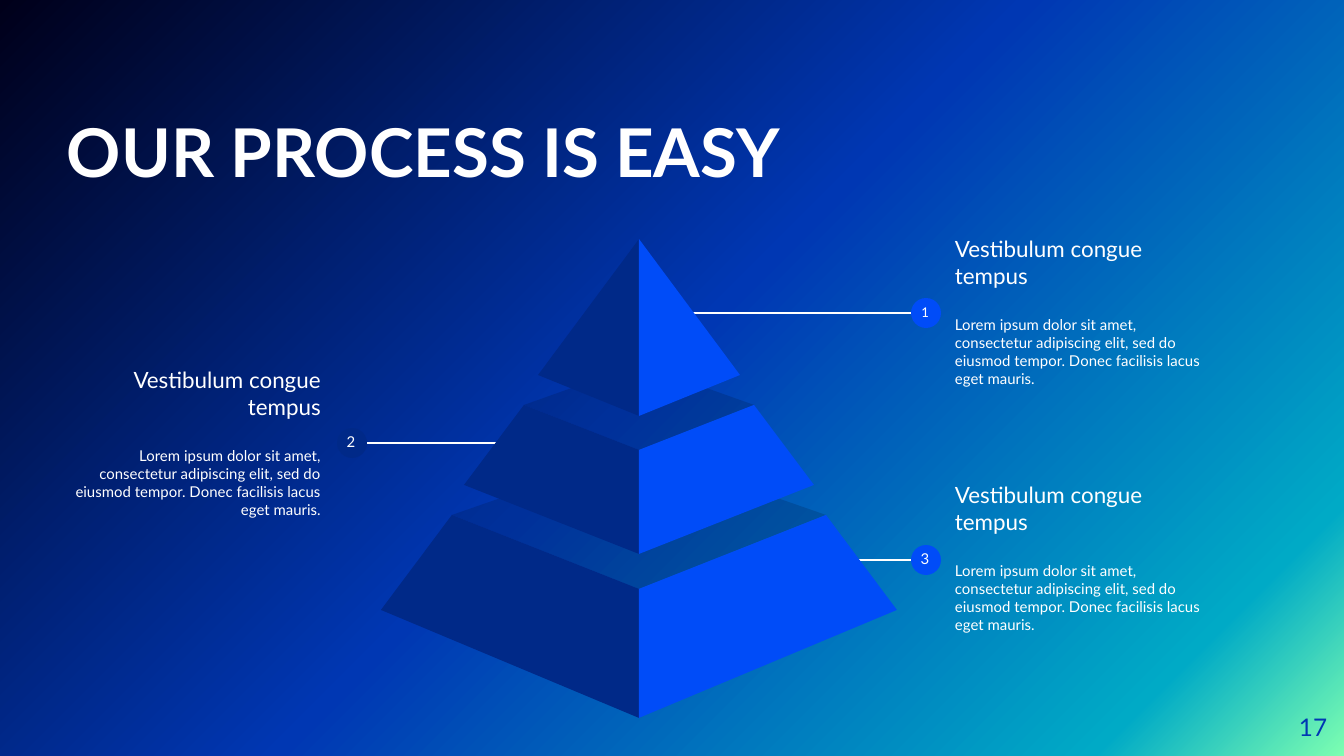
from copy import deepcopy
from dataclasses import dataclass

from lxml import etree
from pptx import Presentation
from pptx import util as u
from pptx.dml.color import RGBColor
from pptx.enum import shapes, text
from pptx.oxml.ns import qn

EMU_PER_PX = 914400 / 134.4
TITLE_ONLY = 5
BODY = ("Lorem ipsum dolor sit amet, consectetur adipiscing elit, "
        "sed do eiusmod tempor. Donec facilisis lacus eget mauris.")


@dataclass(frozen=True)
class Theme:
    font: str = "Lato"
    digit_font: str = "Calibri"
    white: str = "FFFFFF"
    light: str = "004CF8"
    dark: str = "002988"
    shade: str = "001230"
    shade_opacity: int = 19
    page: str = "0037B3"
    backdrop: tuple = ((0, "7DFFB1"), (12, "00AAC6"), (51, "0037B3"), (100, "00001A"))
    title_size: int = 36
    page_size: int = 13
    heading_size: int = 12
    body_size: int = 8


THEME = Theme()


@dataclass(frozen=True)
class Callout:
    number: str
    text_left: int
    text_top: int
    line_start: int
    line_end: int
    line_y: int
    dot_left: int
    color: str = THEME.light
    align: int = text.PP_ALIGN.LEFT
    font: str = THEME.font


@dataclass(frozen=True)
class Tier:
    """One pyramid slice; rim and foot are (half width, y) of its outer corners."""
    rim: tuple
    rim_front: int
    foot: tuple
    foot_front: int
    back: int = None


CENTER_X = 639
TIERS = (
    Tier((187, 515), 589, (258, 610), 718, back=450),
    Tier((115, 405), 450, (175, 485), 554, back=364),
    Tier((0, 239), 239, (101, 375), 416),
)
CALLOUTS = (
    Callout("3", 942, 456, 853, 939, 560, 911),
    Callout("2", 60, 341, 500, 347, 443, 337, THEME.dark, text.PP_ALIGN.RIGHT),
    Callout("1", 942, 210, 688, 939, 313, 911, font=THEME.digit_font),
)


def px(length):
    return u.Emu(round(length * EMU_PER_PX))


def rgb(color):
    return RGBColor.from_string(color)


def paint_background(slide):
    fill = slide.background.fill
    fill.gradient()
    fill.gradient_angle = 135
    stops = fill.gradient_stops
    stop_list = slide.background._cSld.find(".//" + qn("a:gsLst"))
    for _ in range(len(THEME.backdrop) - len(stops)):
        stop_list.append(deepcopy(stop_list[0]))
    for stop, (percent, color) in zip(fill.gradient_stops, THEME.backdrop):
        stop.position = percent / 100
        stop.color.rgb = rgb(color)


def set_frame(frame, anchor, inset=0):
    frame.word_wrap = True
    frame.auto_size = text.MSO_AUTO_SIZE.NONE
    frame.vertical_anchor = anchor
    frame.margin_left = frame.margin_right = px(inset)
    frame.margin_top = frame.margin_bottom = px(inset)


def style(paragraph, size, align=text.PP_ALIGN.LEFT, color=THEME.white,
          font=THEME.font, bold=False):
    paragraph.alignment = align
    for run in paragraph.runs:
        run.font.name = font
        run.font.size = u.Pt(size)
        run.font.bold = bold
        run.font.color.rgb = rgb(color)


def add_text(slide, box, lines, anchor, inset=0):
    frame = slide.shapes.add_textbox(*map(px, box)).text_frame
    set_frame(frame, anchor, inset)
    frame.text = "\n".join(lines)
    return frame.paragraphs


def set_title(slide, wording):
    title = slide.shapes.title
    title.left, title.top, title.width, title.height = map(px, (67, 65, 886, 126))
    set_frame(title.text_frame, text.MSO_ANCHOR.BOTTOM)
    title.text_frame.text = wording
    style(title.text_frame.paragraphs[0], THEME.title_size, bold=True)


def add_page_number(slide, number):
    paragraph, = add_text(slide, (1246, 698, 81, 58), [number], text.MSO_ANCHOR.MIDDLE)
    style(paragraph, THEME.page_size, text.PP_ALIGN.RIGHT, THEME.page)


def add_leader(slide, start, end, y):
    leader = slide.shapes.add_connector(
        shapes.MSO_CONNECTOR.STRAIGHT, px(start), px(y), px(end), px(y))
    leader.line.color.rgb = rgb(THEME.white)
    leader.line.width = u.Pt(0.75)
    etree.SubElement(leader._element.spPr, qn("a:effectLst"))


def fill_plain(shape, color, opacity=100):
    shape.shadow.inherit = False
    shape.fill.solid()
    shape.fill.fore_color.rgb = rgb(color)
    shape.line.fill.background()
    if opacity < 100:
        tint = shape._element.spPr.find(".//" + qn("a:srgbClr"))
        etree.SubElement(tint, qn("a:alpha")).set("val", str(opacity * 1000))


def add_callout(slide, callout):
    add_leader(slide, callout.line_start, callout.line_end, callout.line_y)
    heading, body = add_text(
        slide, (callout.text_left, callout.text_top, 274, 203),
        ["Vestibulum congue tempus", BODY], text.MSO_ANCHOR.MIDDLE, inset=13)
    style(heading, THEME.heading_size, callout.align)
    style(body, THEME.body_size, callout.align)
    body.space_before = u.Pt(14.4)

    left, top = callout.dot_left, callout.line_y - 15
    dot = slide.shapes.add_shape(
        shapes.MSO_SHAPE.OVAL, *map(px, (left, top, 30, 30)))
    fill_plain(dot, callout.color)
    digit, = add_text(slide, (left - 4, top - 8, 36, 46), [callout.number],
                      text.MSO_ANCHOR.TOP, inset=13)
    style(digit, THEME.body_size, text.PP_ALIGN.CENTER, font=callout.font)


def add_face(slide, corners, color, opacity=100):
    """Draw a polygon whose x values count from the pyramid's axis."""
    first, *rest = [(CENTER_X + x, y) for x, y in dict.fromkeys(corners)]
    outline = slide.shapes.build_freeform(*first, scale=EMU_PER_PX)
    outline.add_line_segments(rest, close=True)
    fill_plain(outline.convert_to_shape(), color, opacity)


def add_tier(slide, tier):
    rim_half, rim_y = tier.rim
    foot_half, foot_y = tier.foot
    if tier.back is not None:
        add_face(slide, [(-rim_half, rim_y), (0, tier.rim_front),
                         (rim_half, rim_y), (0, tier.back)],
                 THEME.shade, THEME.shade_opacity)
    for side, color in ((-1, THEME.dark), (1, THEME.light)):
        add_face(slide, [(side * rim_half, rim_y), (side * foot_half, foot_y),
                         (0, tier.foot_front), (0, tier.rim_front)], color)


def main():
    deck = Presentation()
    deck.slide_width, deck.slide_height = px(1344), px(756)
    slide = deck.slides.add_slide(deck.slide_layouts[TITLE_ONLY])
    paint_background(slide)
    set_title(slide, "OUR PROCESS IS EASY")
    add_page_number(slide, "17")
    for callout in CALLOUTS:
        add_callout(slide, callout)
    for tier in TIERS:
        add_tier(slide, tier)
    deck.save("out.pptx")


if __name__ == "__main__":
    main()
